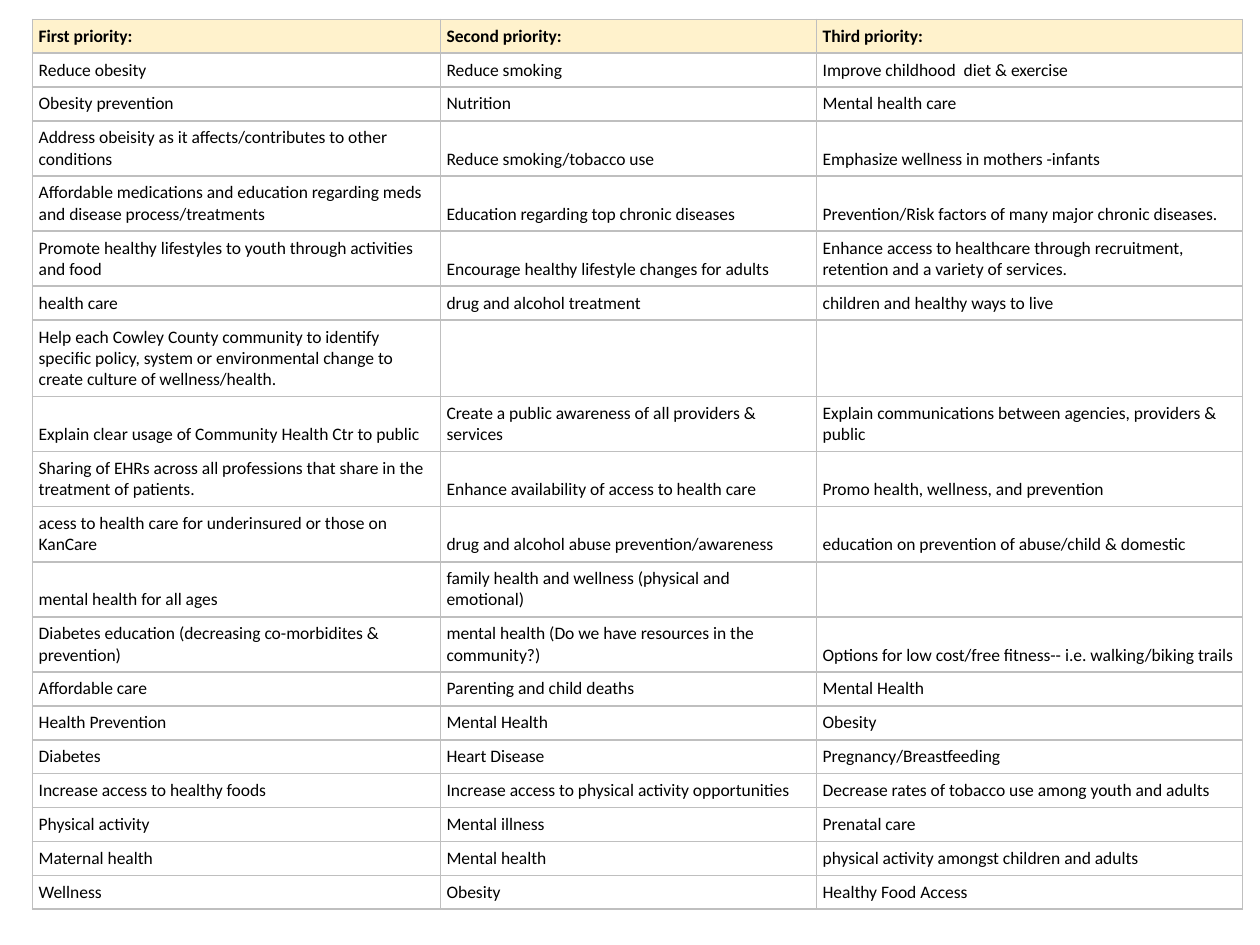
from lxml import etree
from pptx import Presentation
from pptx.dml.color import RGBColor
from pptx.enum.text import MSO_ANCHOR
from pptx.oxml.ns import qn
from pptx.util import Pt

MIDDLE, BOTTOM = MSO_ANCHOR.MIDDLE, MSO_ANCHOR.BOTTOM
BLACK = RGBColor(0x00, 0x00, 0x00)
CREAM = RGBColor(0xFF, 0xF2, 0xCC)
GREY = RGBColor(0xBF, 0xBF, 0xBF)

COLUMN_WIDTHS = [233.1, 214.9, 243.4]
LINE_HEIGHT = 12.15
INSET = 3.6

# Each row: number of text lines, then the three priorities
ROWS = [
    (1, "First priority:", "Second priority:", "Third priority:"),
    (1, "Reduce obesity", "Reduce smoking", "Improve childhood  diet & exercise"),
    (1, "Obesity prevention", "Nutrition", "Mental health care"),
    (2, "Address obeisity as it affects/contributes to other conditions",
     "Reduce smoking/tobacco use", "Emphasize wellness in mothers -infants"),
    (2, "Affordable medications and education regarding meds and disease process/treatments",
     "Education regarding top chronic diseases",
     "Prevention/Risk factors of many major chronic diseases."),
    (2, "Promote healthy lifestyles to youth through activities and food",
     "Encourage healthy lifestyle changes for adults",
     "Enhance access to healthcare through recruitment, retention and a variety of services."),
    (1, "health care", "drug and alcohol treatment", "children and healthy ways to live"),
    (3, "Help each Cowley County community to identify specific policy, system or "
        "environmental change to create culture of wellness/health.", "", ""),
    (2, "Explain clear usage of Community Health Ctr to public",
     "Create a public awareness of all providers & services",
     "Explain communications between agencies, providers & public"),
    (2, "Sharing of EHRs across all professions that share in the treatment of patients.",
     "Enhance availability of access to health care",
     "Promo health, wellness, and prevention"),
    (2, "acess to health care for underinsured or those on KanCare",
     "drug and alcohol abuse prevention/awareness",
     "education on prevention of abuse/child & domestic"),
    (2, "mental health for all ages",
     "family health and wellness (physical and emotional)", ""),
    (2, "Diabetes education (decreasing co-morbidites & prevention)",
     "mental health (Do we have resources in the community?)",
     "Options for low cost/free fitness-- i.e. walking/biking trails"),
    (1, "Affordable care", "Parenting and child deaths", "Mental Health"),
    (1, "Health Prevention", "Mental Health", "Obesity"),
    (1, "Diabetes", "Heart Disease", "Pregnancy/Breastfeeding"),
    (1, "Increase access to healthy foods",
     "Increase access to physical activity opportunities",
     "Decrease rates of tobacco use among youth and adults"),
    (1, "Physical activity", "Mental illness", "Prenatal care"),
    (1, "Maternal health", "Mental health", "physical activity amongst children and adults"),
    (1, "Wellness", "Obesity", "Healthy Food Access"),
]


def add_borders(cell):
    properties = cell._tc.get_or_add_tcPr()
    for position, side in enumerate(("a:lnL", "a:lnR", "a:lnT", "a:lnB")):
        line = etree.Element(qn(side), w=str(Pt(1)))
        fill = etree.SubElement(line, qn("a:solidFill"))
        etree.SubElement(fill, qn("a:srgbClr"), val=str(GREY))
        properties.insert(position, line)


deck = Presentation()
deck.slide_width, deck.slide_height = Pt(720), Pt(540)
page = deck.slides.add_slide(deck.slide_layouts[6])

row_heights = [lines * LINE_HEIGHT + 2 * INSET for lines, *_ in ROWS]
table = page.shapes.add_table(
    len(ROWS), len(COLUMN_WIDTHS), Pt(18.5), Pt(11),
    Pt(sum(COLUMN_WIDTHS)), Pt(sum(row_heights))).table
table.first_row = table.horz_banding = False
for column, width in zip(table.columns, COLUMN_WIDTHS):
    column.width = Pt(width)

for row_number, (_, *priorities) in enumerate(ROWS):
    is_header = row_number == 0
    table.rows[row_number].height = Pt(row_heights[row_number])
    for column_number, priority in enumerate(priorities):
        cell = table.cell(row_number, column_number)
        cell.vertical_anchor = MIDDLE if is_header else BOTTOM
        cell.margin_left = cell.margin_right = Pt(INSET)
        cell.margin_top = cell.margin_bottom = Pt(INSET)
        if is_header:
            cell.fill.solid()
            cell.fill.fore_color.rgb = CREAM
        else:
            cell.fill.background()
        add_borders(cell)
        if not priority:
            continue
        cell.text_frame.text = priority
        font = cell.text_frame.paragraphs[0].runs[0].font
        font.name, font.size, font.bold = "Calibri", Pt(10), is_header
        font.color.rgb = BLACK

deck.save("out.pptx")
